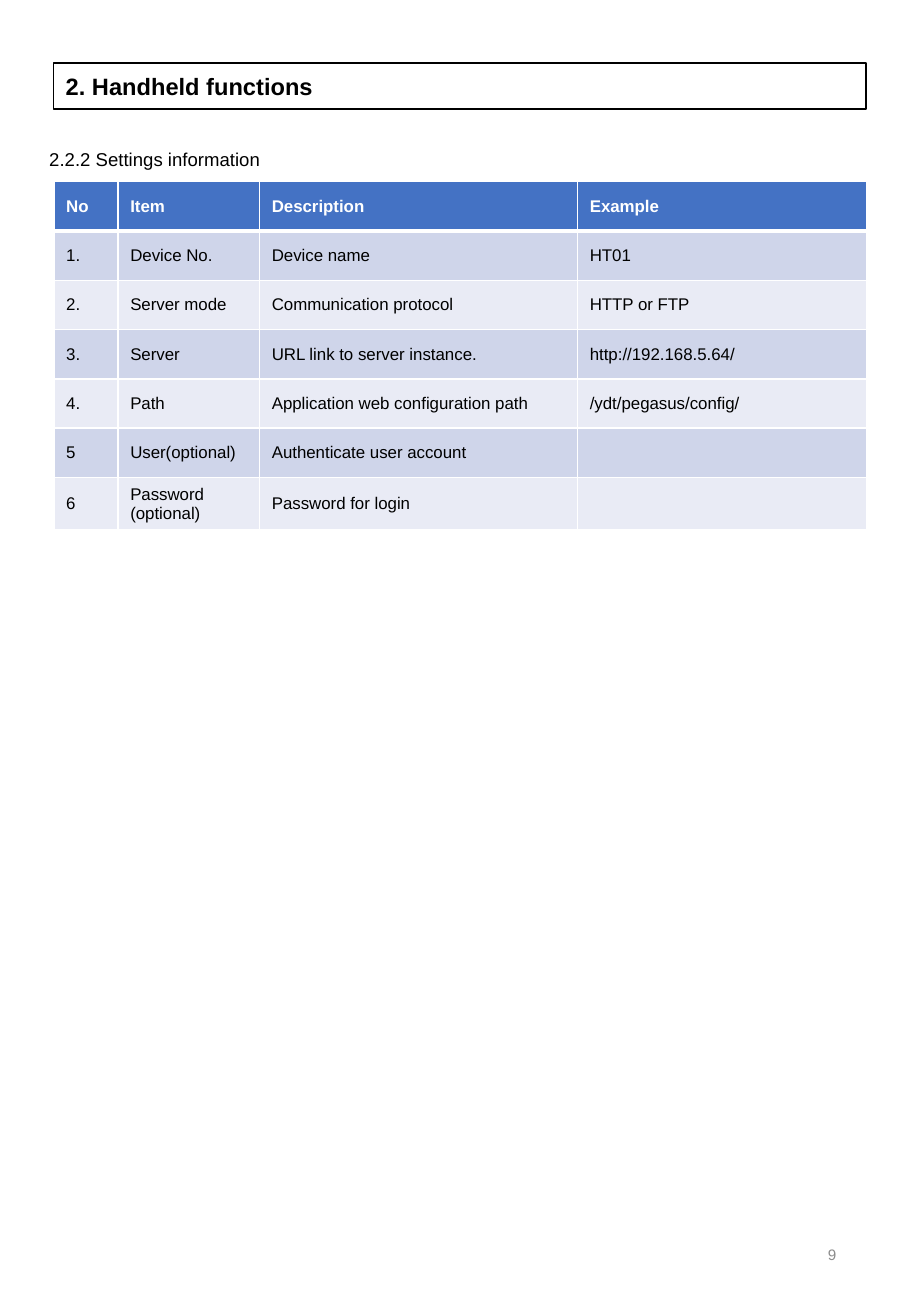
from pptx import Presentation
from pptx import util as u
from pptx.dml.color import RGBColor
from pptx.enum import text as t
from pptx.oxml import parse_xml
from pptx.oxml.ns import nsdecls

HUES = {"ink": "000000", "paper": "FFFFFF", "head": "4472C4",
        "odd": "CFD5EA", "even": "E9EBF5", "grey": "8C8C8C"}

ROWS = [
    ("No", "Item", "Description", "Example"),
    ("1.", "Device No.", "Device name", "HT01"),
    ("2.", "Server mode", "Communication protocol", "HTTP or FTP"),
    ("3.", "Server", "URL link to server instance.", "http://192.168.5.64/"),
    ("4.", "Path", "Application web configuration path", "/ydt/pegasus/config/"),
    ("5", "User(optional)", "Authenticate user account", ""),
    ("6", "Password (optional)", "Password for login", ""),
]


def hue(name):
    return RGBColor.from_string(HUES[name])


class Page:
    font = "Arial"

    def __init__(self, deck):
        self.slide = deck.slides.add_slide(deck.slide_layouts[5])

    def put(self, frame, words, size, color="ink", bold=False,
            align=t.PP_ALIGN.LEFT):
        para = frame.paragraphs[0]
        para.alignment = align
        para.font.size = u.Pt(size)
        if words:
            run = para.add_run()
            run.text = words
            run.font.name = self.font
            run.font.size = u.Pt(size)
            run.font.bold = bold
            run.font.color.rgb = hue(color)

    def title(self, box, words):
        shape = self.slide.shapes.title
        shape.left, shape.top, shape.width, shape.height = map(u.Cm, box)
        shape.line.color.rgb = hue("ink")
        shape.line.width = u.Pt(1)
        frame = shape.text_frame
        frame.auto_size = t.MSO_AUTO_SIZE.NONE
        frame.vertical_anchor = t.MSO_ANCHOR.MIDDLE
        self.put(frame, words, 14, bold=True)

    def label(self, box, words, size, anchor=t.MSO_ANCHOR.TOP, **style):
        frame = self.slide.shapes.add_textbox(*map(u.Cm, box)).text_frame
        frame.word_wrap = True
        frame.vertical_anchor = anchor
        self.put(frame, words, size, **style)

    def edge(self, cell, side, width):
        cell._tc.get_or_add_tcPr().append(parse_xml(
            f'<a:ln{side} {nsdecls("a")} w="{u.Pt(width)}"><a:solidFill>'
            f'<a:srgbClr val="{HUES["paper"]}"/></a:solidFill></a:ln{side}>'))

    def table(self, left, top, widths, high, rows):
        grid = self.slide.shapes.add_table(
            len(rows), len(widths), u.Cm(left), u.Cm(top),
            u.Cm(sum(widths)), u.Cm(high * len(rows))).table
        for col, width in zip(grid.columns, widths):
            col.width = u.Cm(width)
        for i, row in enumerate(rows):
            grid.rows[i].height = u.Cm(high)
            head = i == 0
            band = "head" if head else "odd" if i % 2 else "even"
            for j, words in enumerate(row):
                cell = grid.cell(i, j)
                # The rule under the header is heavier
                for side in "LRTB":
                    heavy = (i, side) in ((0, "B"), (1, "T"))
                    self.edge(cell, side, 3 if heavy else 1)
                cell.fill.solid()
                cell.fill.fore_color.rgb = hue(band)
                cell.vertical_anchor = t.MSO_ANCHOR.MIDDLE
                self.put(cell.text_frame, words, 10,
                         "paper" if head else "ink", head)


def main():
    deck = Presentation()
    deck.slide_width, deck.slide_height = u.Cm(19.05), u.Cm(27.51)
    page = Page(deck)

    # Headings
    page.title((1.12, 1.32, 16.99, 0.96), "2. Handheld functions")
    page.label((0.78, 2.96, 11.66, 0.73), "2.2.2 Settings information", 11)

    # Settings
    page.table(1.13, 3.8, (1.34, 2.96, 6.65, 6.04), 1.03, ROWS)

    # Page number
    page.label((13.45, 25.5, 4.29, 1.46), "9", 9, t.MSO_ANCHOR.MIDDLE,
               color="grey", align=t.PP_ALIGN.RIGHT)

    deck.save("out.pptx")


if __name__ == "__main__":
    main()
